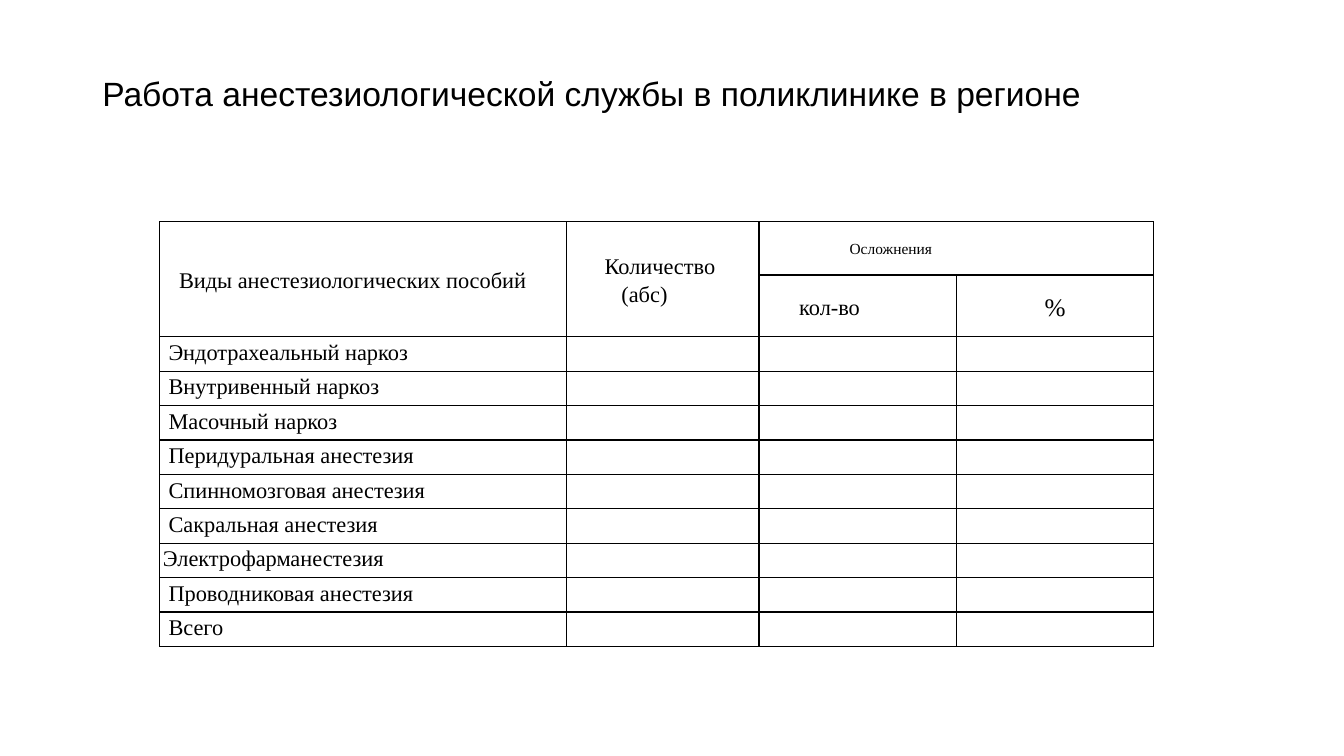
from pptx import Presentation
from pptx.dml.color import RGBColor
from pptx.enum.text import MSO_ANCHOR as Anchor, PP_ALIGN as Align
from pptx.oxml import parse_xml
from pptx.oxml.ns import nsdecls
from pptx.util import Pt

# Content
HEADING = "Работа анестезиологической службы в поликлинике в регионе"
# row, column, last row, last column, size, alignment, (text, indent) lines
HEADERS = [
    (0, 0, 1, 0, 16, Align.LEFT, [("Виды анестезиологических пособий", 11.5)]),
    (0, 1, 1, 1, 16, Align.LEFT, [("Количество", 25), ("(абс)", 37)]),
    (0, 2, 0, 3, 11, Align.LEFT, [("Осложнения", 62.5)]),
    (1, 2, 1, 2, 16, Align.LEFT, [("кол-во", 26.5)]),
    (1, 3, 1, 3, 18, Align.CENTER, [("%", 0)]),
]
KINDS = [
    "Эндотрахеальный наркоз", "Внутривенный наркоз", "Масочный наркоз",
    "Перидуральная анестезия", "Спинномозговая анестезия",
    "Сакральная анестезия", "Электрофарманестезия",
    "Проводниковая анестезия", "Всего",
]
FLUSH_KIND = "Электрофарманестезия"
COLORS = {"ink": "000000", "paper": "FFFFFF"}

# Layout, in points
COLUMN_WIDTHS = [290.5, 137.5, 141, 141]
HEADER_HEIGHTS = [38, 41]
KIND_HEIGHT = 24.6
KIND_INDENT = 4
ROW_HEIGHTS = HEADER_HEIGHTS + [KIND_HEIGHT] * len(KINDS)
EMPTY_MARGINS = {"margin_left": 0, "margin_right": 0, "margin_top": 0, "margin_bottom": 0}
TEXT_MARGINS = {**EMPTY_MARGINS, "margin_left": Pt(2.2), "margin_right": Pt(2.2)}


def apply(target, values):
    for name, value in values.items():
        setattr(target, name, value)


def write(frame, lines, size, face, spacing, align=Align.LEFT):
    for number, (text, indent) in enumerate(lines):
        paragraph = frame.paragraphs[0] if number == 0 else frame.add_paragraph()
        apply(paragraph, {"alignment": align, "line_spacing": spacing})
        if indent:
            paragraph._p.get_or_add_pPr().set("marL", str(Pt(indent)))
        run = paragraph.add_run()
        run.text = text
        apply(run.font, {"size": Pt(size), "name": face})
        run.font.color.rgb = RGBColor.from_string(COLORS["ink"])


def add_borders(cell):
    properties = cell._tc.get_or_add_tcPr()
    for position, side in enumerate("LRTB"):
        properties.insert(position, parse_xml(
            f'<a:ln{side} {nsdecls("a")} w="{Pt(1)}"><a:solidFill>'
            f'<a:srgbClr val="{COLORS["ink"]}"/></a:solidFill></a:ln{side}>'))


deck = Presentation()
apply(deck, {"slide_width": Pt(960), "slide_height": Pt(540)})
slide = deck.slides.add_slide(deck.slide_layouts[6])

# Heading
heading = slide.shapes.add_textbox(Pt(66), Pt(44), Pt(828), Pt(49)).text_frame
apply(heading, {"word_wrap": True, "vertical_anchor": Anchor.MIDDLE})
write(heading, [(HEADING, 0)], 24, "Arial", 0.9)

# Table grid
services = slide.shapes.add_table(
    len(ROW_HEIGHTS), len(COLUMN_WIDTHS), Pt(114.2), Pt(158.4),
    Pt(sum(COLUMN_WIDTHS)), Pt(sum(ROW_HEIGHTS))).table
apply(services, {"first_row": False, "horz_banding": False})
for column, width in zip(services.columns, COLUMN_WIDTHS):
    column.width = Pt(width)
for row, height in zip(services.rows, ROW_HEIGHTS):
    row.height = Pt(height)
for cell in services.iter_cells():
    apply(cell, EMPTY_MARGINS)
    cell.fill.solid()
    cell.fill.fore_color.rgb = RGBColor.from_string(COLORS["paper"])
    add_borders(cell)

# Column headers
for top, left, bottom, right, size, align, lines in HEADERS:
    header = services.cell(top, left)
    if (top, left) != (bottom, right):
        header.merge(services.cell(bottom, right))
    apply(header, {**TEXT_MARGINS, "vertical_anchor": Anchor.MIDDLE})
    write(header.text_frame, lines, size, "Times New Roman", 1.15, align)

# Kinds of anaesthesia
for number, kind in enumerate(KINDS, len(HEADER_HEIGHTS)):
    label = services.cell(number, 0)
    apply(label, TEXT_MARGINS)
    indent = 0 if kind == FLUSH_KIND else KIND_INDENT
    write(label.text_frame, [(kind, indent)], 16, "Times New Roman", 1.15)

deck.save("out.pptx")
